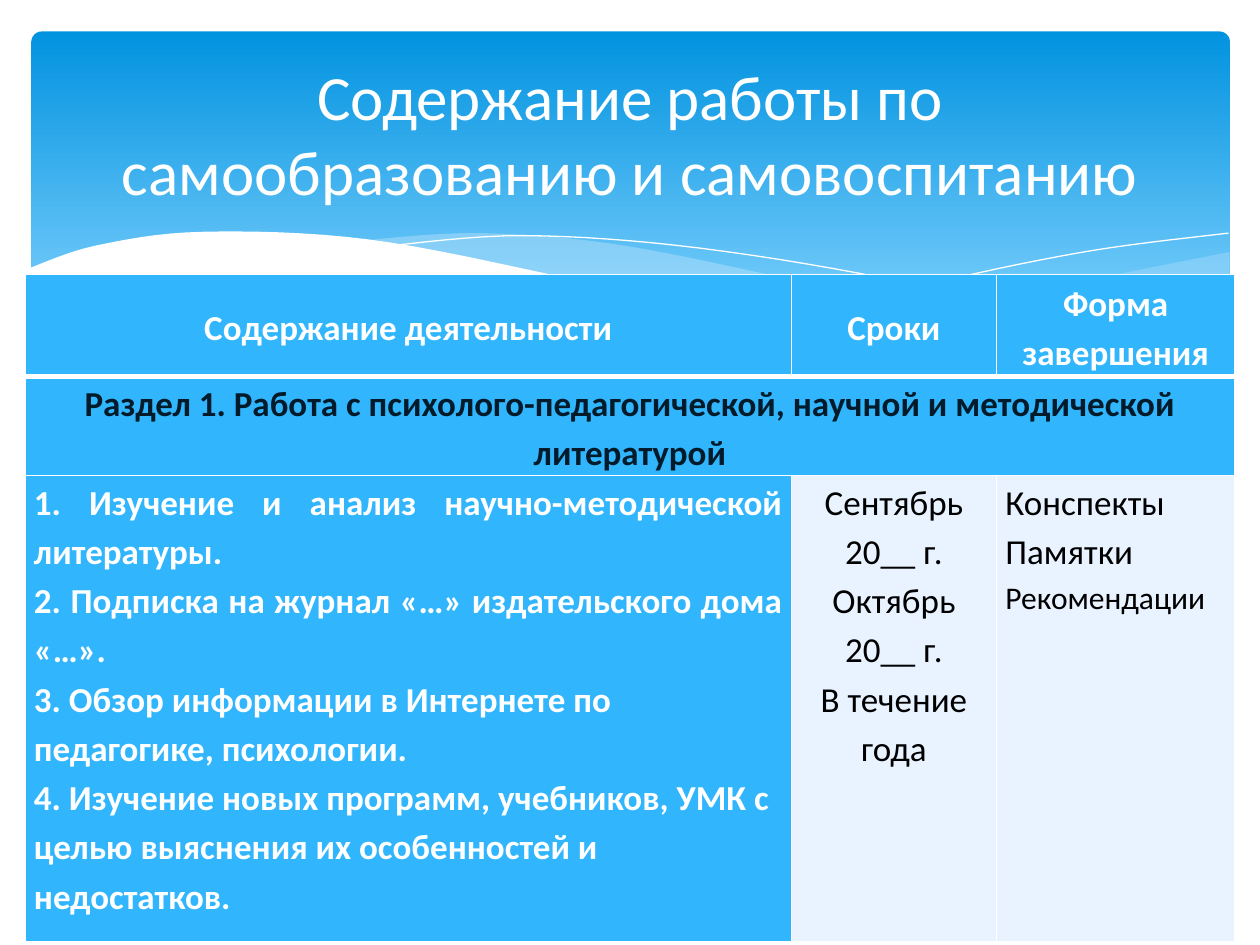
from lxml.etree import SubElement
from pptx import Presentation
from pptx.dml.color import RGBColor
from pptx.enum.shapes import MSO_SHAPE
from pptx.enum.text import MSO_ANCHOR, PP_ALIGN
from pptx.oxml.ns import qn
from pptx.util import Inches, Pt

FONT = "Calibri"
WHITE, BLUE, PALE, DARK, BLACK = "FFFFFF", "31B6FD", "E8F3FF", "021B2B", "000000"
MIST = "C6E7FC"
LEFT, MID, JUST = PP_ALIGN.LEFT, PP_ALIGN.CENTER, PP_ALIGN.JUSTIFY
STEPS = 8

HEAD = [["Содержание деятельности"], ["Сроки"], ["Форма", "завершения"]]
PART = "Раздел 1. Работа с психолого-педагогической, научной и методической литературой"
# Each line is (text, alignment, size).
TASKS = [
    ("1. Изучение и анализ научно-методической литературы.", JUST, 20),
    ("2. Подписка на журнал «…» издательского дома «…».", JUST, 20),
    ("3. Обзор информации в Интернете по педагогике, психологии.", LEFT, 20),
    ("4. Изучение новых программ, учебников, УМК с целью выяснения "
     "их особенностей и недостатков.", LEFT, 20),
]
DATES = [(text, MID, 20) for text in ("Сентябрь 20__ г.", "Октябрь 20__ г.", "В течение года")]
FORMS = [("Конспекты", LEFT, 20), ("Памятки", LEFT, 20), ("Рекомендации", JUST, 18)]


def paint(color, code):
    color.rgb = RGBColor.from_string(code)


def add_run(para, text, size, code, bold=False):
    run = para.add_run()
    run.text = text
    font = run.font
    font.name, font.size, font.bold = FONT, Pt(size), bold
    paint(font.color, code)


def blend(a, b, c, d, t):
    """Return the Catmull-Rom value at t between b and c."""
    return b + t / 2 * (c - a + t * (2 * a - 5 * b + 4 * c - d + t * (3 * (b - c) + d - a)))


def trace(knots):
    """Return the points of a smooth curve through the knots."""
    ends = [knots[0], *knots, knots[-1]]
    spots = [knots[0]]
    for quad in zip(ends, ends[1:], ends[2:], ends[3:]):
        xs, ys = zip(*quad)
        for step in range(1, STEPS + 1):
            spots.append((blend(*xs, step / STEPS), blend(*ys, step / STEPS)))
    return spots


def add_path(slide, spots, close):
    spots = [(Inches(x), Inches(y)) for x, y in spots]
    pen = slide.shapes.build_freeform(*spots[0])
    pen.add_line_segments(spots[1:], close=close)
    path = pen.convert_to_shape()
    path.shadow.inherit = False
    return path


def add_wave(slide, spots, code, alpha=100):
    wave = add_path(slide, spots, True)
    wave.fill.solid()
    paint(wave.fill.fore_color, code)
    wave.line.fill.background()
    if alpha < 100:
        tint = wave.element.spPr.find(qn("a:solidFill"))[0]
        SubElement(tint, qn("a:alpha"), val=str(alpha * 1000))


def add_thread(slide, knots):
    thread = add_path(slide, trace(knots), False)
    thread.fill.background()
    paint(thread.line.color, WHITE)
    thread.line.width = Pt(0)


def add_waves(slide):
    add_wave(slide, trace([(9.76, 2), (8.61, 2.23), (6.61, 2.65)])
             + trace([(6.61, 2.65), (7.69, 2.77), (8.72, 2.74), (9.76, 2.47)]), MIST, 29)
    add_wave(slide, trace([(8.93, 2.73), (7.75, 2.54), (6.29, 2.22), (4.89, 1.94),
                           (3.8, 1.85), (2.86, 1.91)])
             + trace([(2.86, 1.91), (4.49, 2.22), (6.34, 2.61), (7.73, 2.77),
                      (8.93, 2.73)]), MIST, 40)
    add_thread(slide, [(3.09, 1.95), (4.16, 1.87), (5.56, 1.97), (7.27, 2.26), (9.07, 2.72)])
    add_thread(slide, [(6.13, 2.57), (7.48, 2.23), (8.66, 1.99), (9.75, 1.85)])
    crest = trace([(9.77, 2.46), (8.75, 2.73), (7.26, 2.72), (5.79, 2.5), (4.47, 2.2),
                   (2.92, 1.9), (1.61, 1.84), (0.76, 1.95), (0.23, 2.13)])
    add_wave(slide, crest + [(0.23, 3.29), (9.77, 3.29)], WHITE)


def add_banner(slide, box):
    panel = slide.shapes.add_shape(MSO_SHAPE.ROUNDED_RECTANGLE, *box)
    panel.adjustments[0] = 0.03
    panel.shadow.inherit = False
    panel.line.fill.background()
    panel.fill.gradient()
    panel.fill.gradient_angle = 270
    for stop, place, code in zip(panel.fill.gradient_stops, (0, 0.9), ("0293E0", "83D3FE")):
        stop.position = place
        paint(stop.color, code)
    add_waves(slide)


def add_edges(cell, base):
    """Draw white cell borders, with the bottom one base points wide."""
    props = cell._tc.get_or_add_tcPr()
    for side, width in zip("LRTB", (1, 1, 1, base)):
        edge = SubElement(props, qn(f"a:ln{side}"), w=str(Pt(width)))
        fill = SubElement(edge, qn("a:solidFill"))
        SubElement(fill, qn("a:srgbClr"), val=WHITE)


def fill_cell(cell, lines, back, code, bold=True, anchor=MSO_ANCHOR.TOP):
    cell.margin_left = cell.margin_right = Inches(0.07)
    cell.margin_top = cell.margin_bottom = 0
    cell.vertical_anchor = anchor
    cell.fill.solid()
    paint(cell.fill.fore_color, back)
    frame = cell.text_frame
    for i, (text, align, size) in enumerate(lines):
        para = frame.add_paragraph() if i else frame.paragraphs[0]
        para.alignment, para.line_spacing = align, 1.15
        add_run(para, text, size, code, bold)


def add_plan(slide, box):
    grid = slide.shapes.add_table(3, 3, *box).table
    for col, width in zip(grid.columns, (6.08, 1.63, 1.89)):
        col.width = Inches(width)
    for row, height in zip(grid.rows, (0.81, 0.78, 3.7)):
        row.height = Inches(height)
    for i, row in enumerate(grid.rows):
        for cell in row.cells:
            add_edges(cell, 1 if i else 3)
    for i, words in enumerate(HEAD):
        lines = [(word, MID, 20) for word in words]
        fill_cell(grid.cell(0, i), lines, BLUE, WHITE, anchor=MSO_ANCHOR.MIDDLE)
    grid.cell(1, 0).merge(grid.cell(1, 2))
    fill_cell(grid.cell(1, 0), [(PART, MID, 20)], BLUE, DARK)
    fill_cell(grid.cell(2, 0), TASKS, BLUE, WHITE)
    fill_cell(grid.cell(2, 1), DATES, PALE, BLACK, bold=False)
    fill_cell(grid.cell(2, 2), FORMS, PALE, BLACK, bold=False)


def set_title(slide, box):
    title = slide.shapes.title
    title.left, title.top, title.width, title.height = box
    frame = title.text_frame
    frame.word_wrap = True
    frame.vertical_anchor = MSO_ANCHOR.MIDDLE
    para = frame.paragraphs[0]
    para.alignment = MID
    add_run(para, "Содержание работы по самообразованию и самовоспитанию", 36, WHITE)
    title.element.getparent().append(title.element)  # bring to front


def make_box(*sizes):
    return [Inches(size) for size in sizes]


def main():
    deck = Presentation()
    deck.slide_width, deck.slide_height = Inches(10), Inches(7.5)
    slide = deck.slides.add_slide(deck.slide_layouts[5])
    add_banner(slide, make_box(0.25, 0.25, 9.51, 2.7))
    add_plan(slide, make_box(0.2, 2.18, 9.6, 5.29))
    set_title(slide, make_box(0.5, 0.37, 9, 1.37))
    deck.save("out.pptx")


if __name__ == "__main__":
    main()
